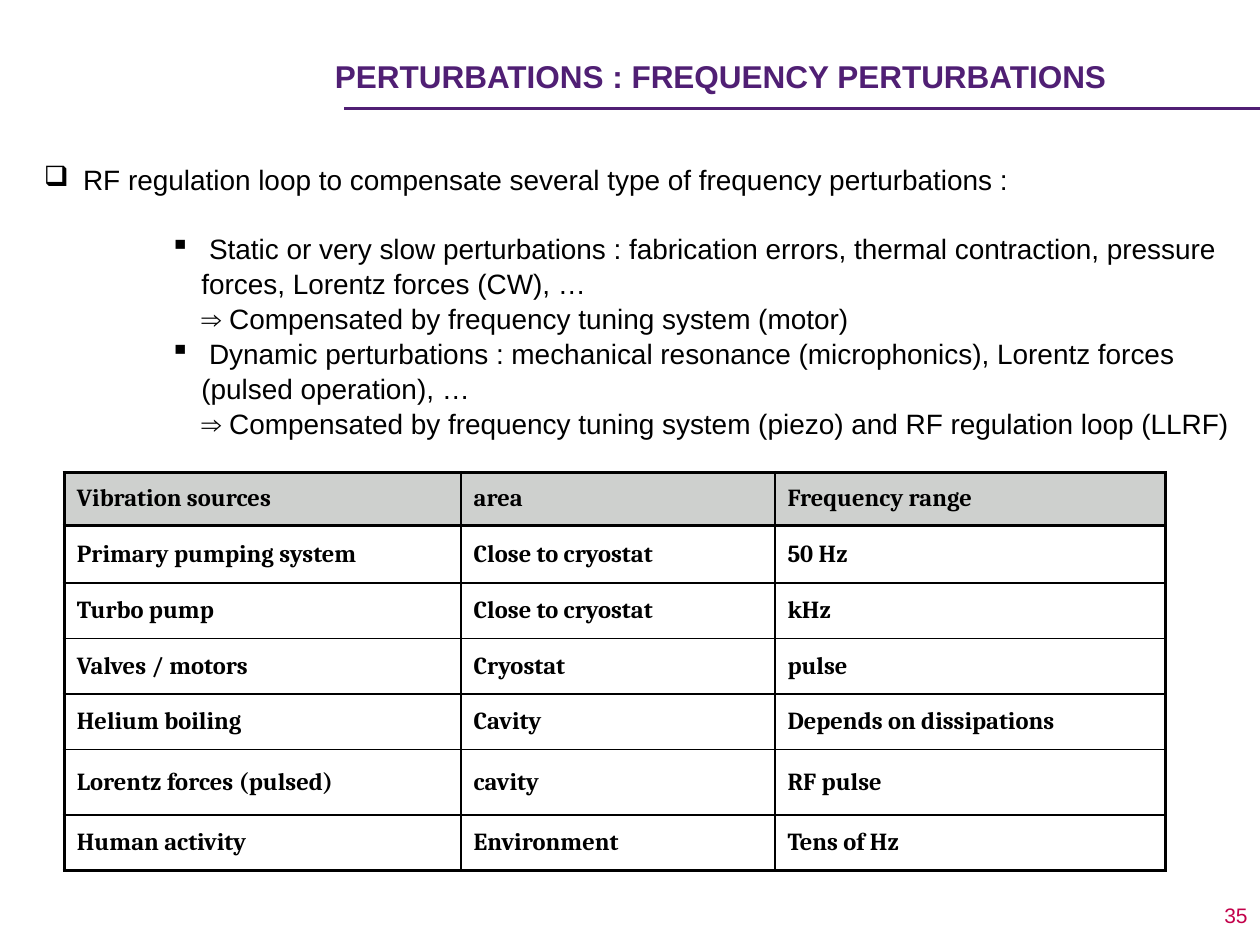
from lxml import etree
from pptx import Presentation
from pptx.dml.color import RGBColor
from pptx.enum.shapes import MSO_CONNECTOR
from pptx.enum.text import MSO_ANCHOR, PP_ALIGN
from pptx.oxml.ns import qn
from pptx.util import Pt

LINE = MSO_CONNECTOR.STRAIGHT
MIDDLE, TOP = MSO_ANCHOR.MIDDLE, MSO_ANCHOR.TOP
LEFT, RIGHT = PP_ALIGN.LEFT, PP_ALIGN.RIGHT

BLACK, PURPLE, RED, GREY = "000000", "501F74", "C3004A", "CED0CE"
THICK, THIN = 2.25, 1

HEAD = dict(name="Arial", size=Pt(18), bold=True)
BODY = dict(name="Arial", size=Pt(16))
PAGE = dict(name="Arial", size=Pt(12))
CELL = dict(name="Cambria", size=Pt(14), bold=True)

# Left margin, bullet and text of each paragraph
POINTS = [
    (36, "❑", " RF regulation loop to compensate several type of frequency perturbations :"),
    (108, "▪", " Static or very slow perturbations : fabrication errors, thermal contraction, "
               "pressure forces, Lorentz forces (CW), …"),
    (108, None, "⇒ Compensated by frequency tuning system (motor)"),
    (108, "▪", " Dynamic perturbations : mechanical resonance (microphonics), "
               "Lorentz forces (pulsed operation), …"),
    (108, None, "⇒ Compensated by frequency tuning system (piezo) and RF regulation loop (LLRF)"),
]
ROWS = [
    ("Vibration sources", "area", "Frequency range"),
    ("Primary pumping system", "Close to cryostat", "50 Hz"),
    ("Turbo pump", "Close to cryostat", "kHz"),
    ("Valves / motors", "Cryostat", "pulse"),
    ("Helium boiling", "Cavity", "Depends on dissipations"),
    ("Lorentz forces (pulsed)", "cavity", "RF pulse"),
    ("Human activity", "Environment", "Tens of Hz"),
]
WIDTHS = [226.8, 179.3, 223.2]
HEIGHTS = [30.2, 33.1, 31.7, 31.7, 31.7, 37.4, 31.7]


def rgb(code):
    return RGBColor.from_string(code)


def style(font, form, color):
    for key, value in form.items():
        setattr(font, key, value)
    font.color.rgb = rgb(color)


def add_box(slide, box, anchor):
    frame = slide.shapes.add_textbox(*map(Pt, box)).text_frame
    frame.word_wrap = True
    frame.vertical_anchor = anchor
    return frame


def add_label(slide, box, text, form, color, align=LEFT):
    para = add_box(slide, box, MIDDLE).paragraphs[0]
    para.alignment = align
    run = para.add_run()
    run.text = text
    style(run.font, form, color)


def add_rule(slide, left, right, y):
    rule = slide.shapes.add_connector(LINE, Pt(left), Pt(y), Pt(right), Pt(y))
    rule.line.color.rgb = rgb(PURPLE)
    rule.line.width = Pt(1.5)
    etree.SubElement(rule._element.spPr, qn("a:effectLst"))


def set_bullet(para, margin, mark):
    props = para._p.get_or_add_pPr()
    props.set("marL", str(Pt(margin)))
    props.set("indent", str(Pt(-18 if mark else 0)))
    if mark:
        etree.SubElement(props, qn("a:buChar"), char=mark)
    else:
        etree.SubElement(props, qn("a:buNone"))


def add_points(slide, box):
    frame = add_box(slide, box, TOP)
    frame.margin_top = Pt(42)
    for i, (margin, mark, text) in enumerate(POINTS):
        para = frame.add_paragraph() if i else frame.paragraphs[0]
        set_bullet(para, margin, mark)
        para.line_spacing = 1.04
        if i == 1:
            para.space_before = Pt(19.2)
        run = para.add_run()
        run.text = text
        style(run.font, BODY, BLACK)


def set_edges(cell, edges):
    props = cell._tc.get_or_add_tcPr()
    for i, (side, width) in enumerate(edges.items()):
        edge = etree.Element(qn("a:ln" + side), w=str(Pt(width)))
        fill = etree.SubElement(edge, qn("a:solidFill"))
        etree.SubElement(fill, qn("a:srgbClr"), val=BLACK)
        props.insert(i, edge)


def add_grid(slide, left, top):
    rows, cols = len(ROWS), len(WIDTHS)
    size = map(Pt, (left, top, sum(WIDTHS), sum(HEIGHTS)))
    table = slide.shapes.add_table(rows, cols, *size).table
    table.horz_banding = table.first_row = False
    for col, width in zip(table.columns, WIDTHS):
        col.width = Pt(width)
    for row, height in zip(table.rows, HEIGHTS):
        row.height = Pt(height)
    for r, texts in enumerate(ROWS):
        for c, text in enumerate(texts):
            cell = table.cell(r, c)
            cell.vertical_anchor = MIDDLE
            run = cell.text_frame.paragraphs[0].add_run()
            run.text = text
            style(run.font, CELL, BLACK)
            if r == 0:
                cell.fill.solid()
                cell.fill.fore_color.rgb = rgb(GREY)
            else:
                cell.fill.background()
            # Thick frame and header, thin inner lines
            set_edges(cell, {
                "L": THICK if c == 0 else THIN,
                "R": THICK if c == cols - 1 else THIN,
                "T": THICK if r < 2 else THIN,
                "B": THICK if r in (0, rows - 1) else THIN,
            })


def main():
    deck = Presentation()
    deck.slide_width, deck.slide_height = Pt(720), Pt(540)
    slide = deck.slides.add_slide(deck.slide_layouts[6])
    # Header and page number
    add_rule(slide, 196.6, 720, 61.9)
    add_label(slide, (675.4, 511.9, 44.6, 22.3), "35", PAGE, RED, RIGHT)
    add_label(slide, (184.3, 15.1, 517.7, 56.2),
              "PERTURBATIONS : FREQUENCY PERTURBATIONS", HEAD, PURPLE)
    # Bullets and table
    add_points(slide, (0, 50.4, 720, 239.8))
    add_grid(slide, 36.7, 270)
    deck.save("out.pptx")


if __name__ == "__main__":
    main()
